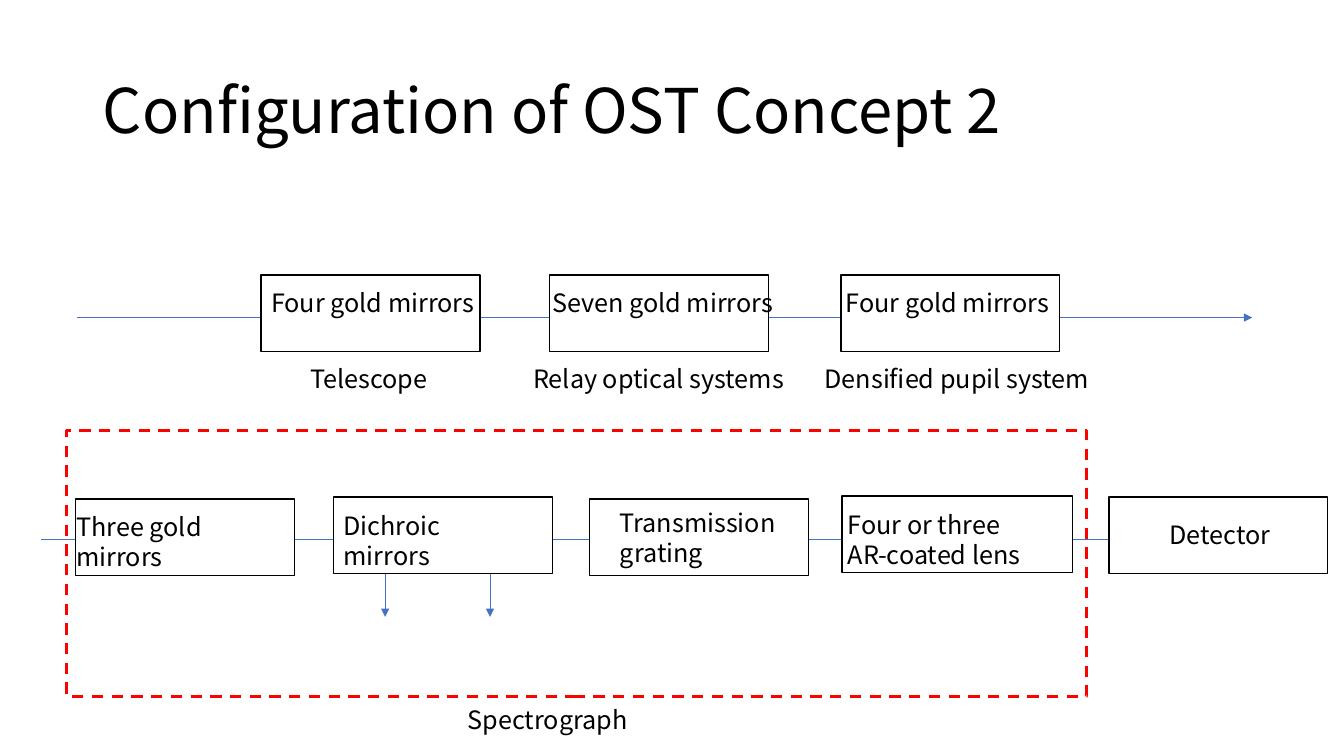
import dataclasses

import pptx
import pptx.dml.color
import pptx.enum.dml
import pptx.enum.shapes
import pptx.enum.text
import pptx.oxml
import pptx.oxml.ns
import pptx.shapes.autoshape
import pptx.slide
import pptx.text.text
import pptx.util

PX = 9144  # 100 px to the inch
FONT = "Noto Sans CJK JP"
BLACK = pptx.dml.color.RGBColor(0x00, 0x00, 0x00)
WHITE = pptx.dml.color.RGBColor(0xFF, 0xFF, 0xFF)
BLUE = pptx.dml.color.RGBColor(0x44, 0x72, 0xC4)
RED = pptx.dml.color.RGBColor(0xFF, 0x00, 0x00)


@dataclasses.dataclass(frozen=True)
class Rect:
    left: int
    top: int
    width: int = 217
    height: int = 76


@dataclasses.dataclass(frozen=True)
class Label:
    text: str
    left: int
    top: int
    width: int
    height: int = 40


@dataclasses.dataclass(frozen=True)
class Arrow:
    left: int
    top: int
    right: int
    bottom: int


ARROWS = [
    Arrow(382, 553, 382, 612),
    Arrow(486, 553, 486, 612),
    Arrow(41, 535, 1231, 535),
    Arrow(76, 315, 1242, 315),
]
BOXES = [
    Rect(259, 273),
    Rect(545, 273),
    Rect(834, 273),
    Rect(75, 495),
    Rect(331, 493),
    Rect(585, 495),
    Rect(835, 492, 229),
    Rect(1100, 493),
]
FRAME = Rect(66, 427, 1012, 264)
LABELS = [
    Label("Four gold mirrors", 259, 280, 227),
    Label("Seven gold mirrors", 538, 280, 245),
    Label("Four gold mirrors", 829, 280, 227),
    Label("Telescope", 298, 356, 140),
    Label("Relay optical systems", 519, 356, 272),
    Label("Densified pupil system", 808, 356, 286),
    Label("Three gold mirrors", 66, 502, 234, 71),
    Label("Dichroic mirrors", 331, 501, 206, 71),
    Label("Transmission\ngrating", 605, 498, 184, 71),
    Label("Four or three\nAR-coated lens", 831, 500, 198, 71),
    Label("Detector", 1150, 510, 125),
    Label("Spectrograph", 454, 694, 182),
]


def area(item: Rect | Label) -> list[int]:
    return [n * PX for n in (item.left, item.top, item.width, item.height)]


def style(para: pptx.text.text._Paragraph, size: int) -> None:
    para.alignment = pptx.enum.text.PP_ALIGN.LEFT
    para.font.name = FONT
    para.font.size = pptx.util.Pt(size)
    para.font.color.rgb = BLACK


def add_title(slide: pptx.slide.Slide, text: str) -> None:
    title = slide.shapes.title
    title.left, title.top, title.width, title.height = area(
        Rect(92, 40, 1150, 145)
    )
    title.text_frame.text = text
    title.text_frame.vertical_anchor = pptx.enum.text.MSO_ANCHOR.MIDDLE
    para = title.text_frame.paragraphs[0]
    para.line_spacing = 0.9
    style(para, 44)


def add_arrow(slide: pptx.slide.Slide, arrow: Arrow) -> None:
    line = slide.shapes.add_connector(
        pptx.enum.shapes.MSO_CONNECTOR.STRAIGHT,
        *(n * PX for n in dataclasses.astuple(arrow)),
    )
    line.line.color.rgb = BLUE
    line.line.width = pptx.util.Pt(0.5)
    space = pptx.oxml.ns.nsdecls("a")
    head = pptx.oxml.parse_xml(f'<a:tailEnd {space} type="triangle"/>')
    line.line._get_or_add_ln().append(head)
    line._element.spPr.append(pptx.oxml.parse_xml(f"<a:effectLst {space}/>"))


def add_rect(
    slide: pptx.slide.Slide,
    rect: Rect,
    color: pptx.dml.color.RGBColor,
    weight: int,
) -> pptx.shapes.autoshape.Shape:
    shape = slide.shapes.add_shape(
        pptx.enum.shapes.MSO_SHAPE.RECTANGLE, *area(rect)
    )
    shape.shadow.inherit = False
    shape.line.color.rgb = color
    shape.line.width = pptx.util.Pt(weight)
    return shape


def add_label(slide: pptx.slide.Slide, label: Label) -> None:
    frame = slide.shapes.add_textbox(*area(label)).text_frame
    frame.word_wrap = True
    frame.auto_size = pptx.enum.text.MSO_AUTO_SIZE.SHAPE_TO_FIT_TEXT
    frame.text = label.text
    for para in frame.paragraphs:
        style(para, 18)


def main() -> None:
    deck = pptx.Presentation()
    deck.slide_width = 1333 * PX
    deck.slide_height = 750 * PX
    slide = deck.slides.add_slide(deck.slide_layouts.get_by_name("Title Only"))
    add_title(slide, "Configuration of OST Concept 2")
    for arrow in ARROWS:
        add_arrow(slide, arrow)
    for box in BOXES:
        shape = add_rect(slide, box, BLACK, 1)
        shape.fill.solid()
        shape.fill.fore_color.rgb = WHITE
    for label in LABELS:
        add_label(slide, label)
    border = add_rect(slide, FRAME, RED, 2)
    border.fill.background()
    border.line.dash_style = pptx.enum.dml.MSO_LINE.DASH
    deck.save("out.pptx")


if __name__ == "__main__":
    main()
